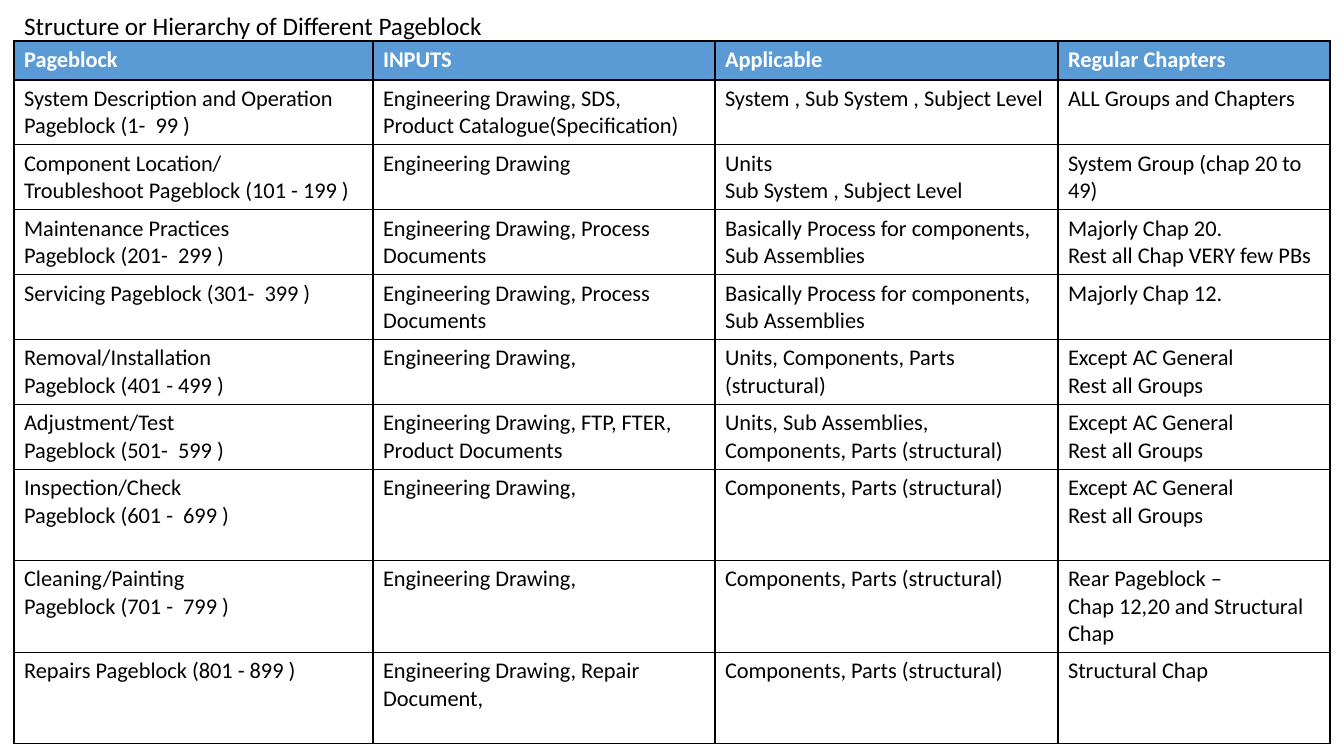
from lxml import etree
from pptx import Presentation
from pptx.dml.color import RGBColor
from pptx.enum.text import MSO_ANCHOR, MSO_AUTO_SIZE, PP_ALIGN
from pptx.oxml.ns import qn
from pptx.util import Emu, Pt

TOP = MSO_ANCHOR.TOP
LEFT = PP_ALIGN.LEFT
NO_AUTOFIT = MSO_AUTO_SIZE.NONE

BLACK = RGBColor(0x00, 0x00, 0x00)
WHITE = RGBColor(0xFF, 0xFF, 0xFF)
HEADER_BLUE = RGBColor(0x5B, 0x9B, 0xD5)
FONT = "Calibri"

COLUMN_WIDTHS = [359, 342, 343, 272]
ROW_HEIGHTS = [39] + [64] * 6 + [91] * 3

DRAWING = "Engineering Drawing,"
PROCESS = "Engineering Drawing, Process Documents"
ASSEMBLIES = "Basically Process for components, Sub Assemblies"
PARTS = "Components, Parts (structural)"
EXCEPT_GENERAL = "Except AC General\nRest all Groups"

PAGEBLOCKS = [
    ("Pageblock", "INPUTS", "Applicable", "Regular Chapters"),
    ("System Description and Operation\nPageblock (1-  99 )",
     "Engineering Drawing, SDS,\nProduct Catalogue(Specification)",
     "System , Sub System , Subject Level", "ALL Groups and Chapters"),
    ("Component Location/\nTroubleshoot Pageblock (101 - 199 )",
     "Engineering Drawing", "Units\nSub System , Subject Level",
     "System Group (chap 20 to 49)"),
    ("Maintenance Practices\nPageblock (201-  299 )", PROCESS, ASSEMBLIES,
     "Majorly Chap 20.\nRest all Chap VERY few PBs"),
    ("Servicing Pageblock (301-  399 )", PROCESS, ASSEMBLIES,
     "Majorly Chap 12."),
    ("Removal/Installation\nPageblock (401 - 499 )", DRAWING,
     "Units, Components, Parts (structural)", EXCEPT_GENERAL),
    ("Adjustment/Test\nPageblock (501-  599 )",
     "Engineering Drawing, FTP, FTER,\nProduct Documents",
     "Units, Sub Assemblies, Components, Parts (structural)", EXCEPT_GENERAL),
    ("Inspection/Check\nPageblock (601 -  699 )", DRAWING, PARTS,
     EXCEPT_GENERAL),
    ("Cleaning/Painting\nPageblock (701 -  799 )", DRAWING, PARTS,
     "Rear Pageblock –\nChap 12,20 and Structural Chap"),
    ("Repairs Pageblock (801 - 899 )", "Engineering Drawing, Repair Document,",
     PARTS, "Structural Chap"),
]


def px(length):
    return Emu(round(length * 914400 / 100.8))


def format_text(text_frame, size, color, bold=False):
    for paragraph in text_frame.paragraphs:
        paragraph.alignment = LEFT
        for run in paragraph.runs:
            run.font.name = FONT
            run.font.size = Pt(size)
            run.font.bold = bold
            run.font.color.rgb = color


def add_title(slide, text):
    title = slide.shapes.title
    title.left, title.top, title.width, title.height = (
        px(14), px(5), px(500), px(72))
    text_frame = title.text_frame
    text_frame.text = text
    text_frame.word_wrap = False
    text_frame.auto_size = NO_AUTOFIT
    text_frame.vertical_anchor = TOP
    format_text(text_frame, 18, BLACK)


def add_borders(cell):
    properties = cell._tc.get_or_add_tcPr()
    # Border lines come before the fill in the cell properties
    for index, side in enumerate(("a:lnL", "a:lnR", "a:lnT", "a:lnB")):
        line = etree.Element(qn(side), w=str(Pt(1)))
        fill = etree.SubElement(line, qn("a:solidFill"))
        etree.SubElement(fill, qn("a:srgbClr"), val=str(BLACK))
        properties.insert(index, line)


def fill_cell(cell, text, is_header):
    cell.text_frame.text = text
    format_text(cell.text_frame, 16, WHITE if is_header else BLACK, is_header)
    cell.fill.solid()
    cell.fill.fore_color.rgb = HEADER_BLUE if is_header else WHITE
    add_borders(cell)


def add_pageblock_table(slide):
    frame = slide.shapes.add_table(
        len(ROW_HEIGHTS), len(COLUMN_WIDTHS), px(14), px(41),
        px(sum(COLUMN_WIDTHS)), px(sum(ROW_HEIGHTS)))
    table = frame.table
    table.horz_banding = False
    for column, width in zip(table.columns, COLUMN_WIDTHS):
        column.width = px(width)
    for row, height, texts in zip(table.rows, ROW_HEIGHTS, PAGEBLOCKS):
        row.height = px(height)
        for cell, text in zip(row.cells, texts):
            fill_cell(cell, text, texts is PAGEBLOCKS[0])


def main():
    presentation = Presentation()
    presentation.slide_width = px(1344)
    presentation.slide_height = px(756)
    # Layout 5 holds a title only
    slide = presentation.slides.add_slide(presentation.slide_layouts[5])
    add_title(slide, "Structure or Hierarchy of Different Pageblock")
    add_pageblock_table(slide)
    presentation.save("out.pptx")


if __name__ == "__main__":
    main()
